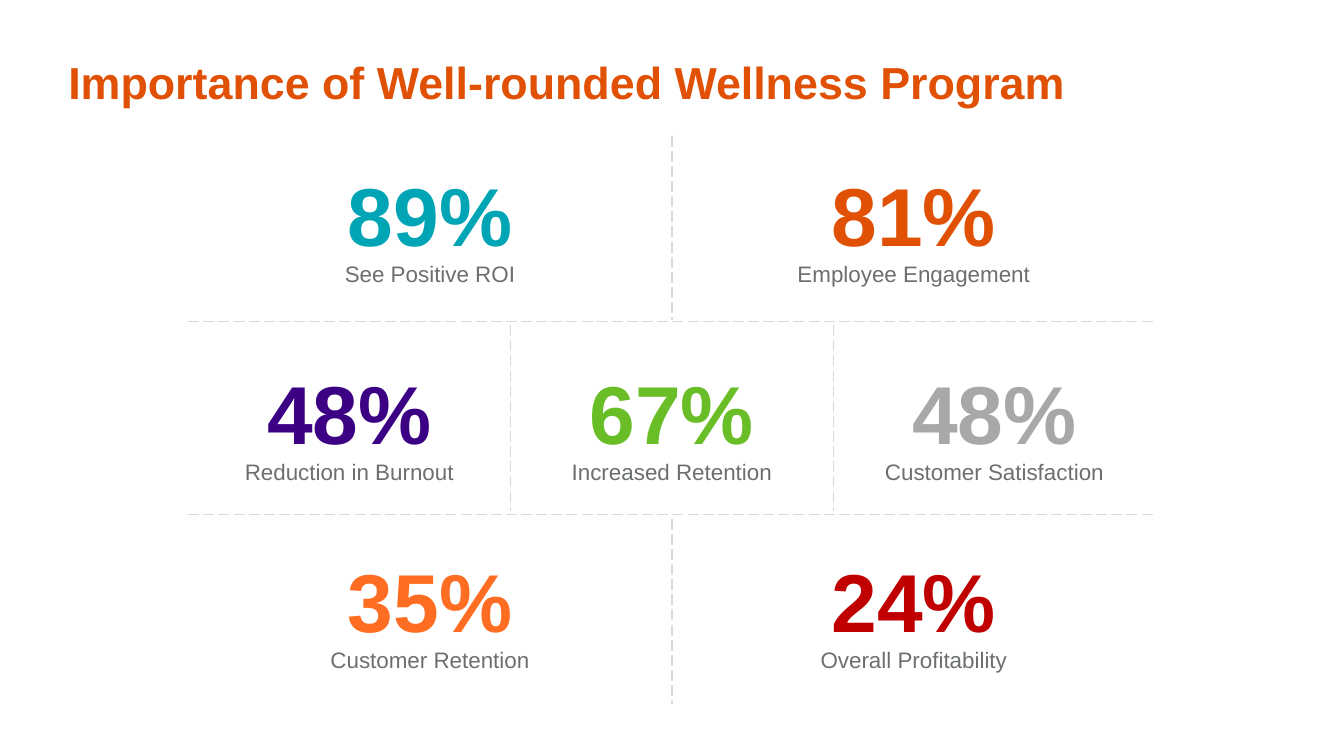
from lxml import etree
from pptx import Presentation
from pptx.dml.color import RGBColor
from pptx.enum.dml import MSO_LINE
from pptx.enum.shapes import MSO_CONNECTOR
from pptx.enum.text import MSO_ANCHOR, PP_ALIGN
from pptx.oxml.ns import qn
from pptx.util import Pt

STRAIGHT = MSO_CONNECTOR.STRAIGHT
LONG_DASH = MSO_LINE.LONG_DASH
TOP, MIDDLE = MSO_ANCHOR.TOP, MSO_ANCHOR.MIDDLE
LEFT, CENTER = PP_ALIGN.LEFT, PP_ALIGN.CENTER

# Content
TITLE = "Importance of Well-rounded Wellness Program"
TITLE_COLOR, LABEL_COLOR, RULE_COLOR = "E05106", "6C6F70", "D9D9D9"

# Each row: text top, divider top, divider bottom, statistics
ROWS = [
    (80.6, 72.7, 171.4, [("89%", "See Positive ROI", "00A5B5"),
                         ("81%", "Employee Engagement", "E05106")]),
    (186.5, 174.2, 273.6, [("48%", "Reduction in Burnout", "3B0083"),
                           ("67%", "Increased Retention", "69BE28"),
                           ("48%", "Customer Satisfaction", "A6A8AA")]),
    (287.3, 277.9, 377.3, [("35%", "Customer Retention", "FF6D22"),
                           ("24%", "Overall Profitability", "C00000")]),
]
ROW_RULES = [172.1, 275.8]

# Layout
GRID_LEFT, GRID_WIDTH = 100.8, 518.4
STAT_HEIGHT = 74.9


def rgb(color):
    return RGBColor.from_string(color)


def add_box(left, top, width, height, anchor, inset_top, inset_bottom):
    box = page.shapes.add_textbox(Pt(left), Pt(top), Pt(width), Pt(height))
    frame = box.text_frame
    frame.word_wrap = True
    frame.vertical_anchor = anchor
    frame.margin_top, frame.margin_bottom = Pt(inset_top), Pt(inset_bottom)
    return frame


def write(para, text, *, size, color, bold=False, align=LEFT, spacing=None):
    para.alignment = align
    if spacing:
        para.line_spacing = Pt(spacing)
    span = para.add_run()
    span.text = text
    span.font.name = "Arial"
    span.font.size = Pt(size)
    span.font.bold = bold
    span.font.color.rgb = rgb(color)


def add_rule(x1, y1, x2, y2):
    rule = page.shapes.add_connector(STRAIGHT, Pt(x1), Pt(y1), Pt(x2), Pt(y2))
    rule.line.color.rgb = rgb(RULE_COLOR)
    rule.line.width = Pt(0.75)
    rule.line.dash_style = LONG_DASH
    etree.SubElement(rule._element.spPr, qn("a:effectLst"))


deck = Presentation()
deck.slide_width, deck.slide_height = Pt(720), Pt(405)
page = deck.slides.add_slide(deck.slide_layouts[6])

# Title
title = add_box(29.5, 22.3, 598.3, 28.8, TOP, 6.9, 0)
write(title.paragraphs[0], TITLE, size=24, color=TITLE_COLOR, bold=True)

# Rules between rows
for y in ROW_RULES:
    add_rule(GRID_LEFT, y, GRID_LEFT + GRID_WIDTH, y)

# Statistics, with a divider between neighbours
for text_top, rule_top, rule_bottom, stats in ROWS:
    width = GRID_WIDTH / len(stats)
    for column, (value, label, color) in enumerate(stats):
        left = GRID_LEFT + column * width
        if column:
            add_rule(left, rule_top, left, rule_bottom)
        stat = add_box(left, text_top, width, STAT_HEIGHT, MIDDLE, 6, 0)
        write(stat.paragraphs[0], value, size=44, color=color, bold=True,
              align=CENTER)
        write(stat.add_paragraph(), label, size=12, color=LABEL_COLOR,
              align=CENTER, spacing=13)

deck.save("out.pptx")
